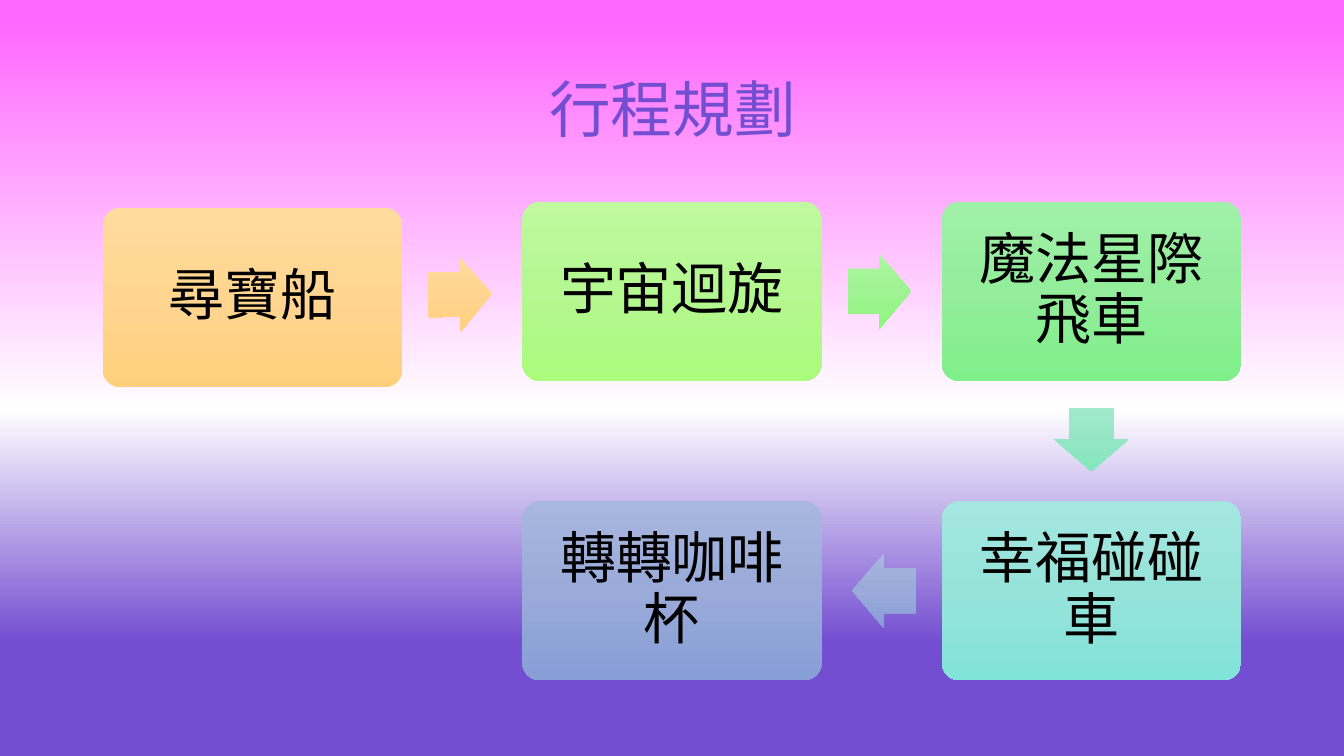
import math

import pptx
import pptx.dml.color
import pptx.enum.shapes
import pptx.enum.text
import pptx.oxml
import pptx.oxml.ns
import pptx.util

KIND = pptx.enum.shapes.MSO_SHAPE
HAN = "Noto Sans CJK JP"
STOPS = (0, 50, 100)
RIDES = [
    ("尋寶船", 0, 0.02, ("FFDB9E", "FFD590", "FFD07C")),
    ("宇宙迴旋", 1, 0, ("C0F99F", "B5F791", "ABFB7D")),
    ("魔法星際飛車", 2, 0, ("A1F0A9", "93ED9B", "7FEF89")),
    ("幸福碰碰車", 2, 1, ("A4E7E0", "96E3DA", "82E3D9")),
    ("轉轉咖啡杯", 1, 1, ("A8B7DF", "9AABD9", "889ED7")),
]
LINKS = [
    ("FFDB9E", "FFD590", "FFD07C"),
    ("ACF6A0", "9FF392", "8EF77D"),
    ("A3EACC", "95E6C4", "81E7BD"),
    ("A8B7DF", "9AABD9", "889ED7"),
]


def tint(code):
    return pptx.dml.color.RGBColor.from_string(code)


def apply(item, style):
    for name, value in style.items():
        setattr(item, name, value)


class Deck:
    """Holds the style and slide, and draws on a grid of ride boxes."""

    left, top, wide, high = 1.02, 2, 4.16, 2.97
    box, arrow, pad = (2.97, 1.78), (0.63, 0.74), 0.22

    def __init__(self):
        self.show = pptx.Presentation()
        apply(self.show, {"slide_width": pptx.util.Inches(13.33),
                          "slide_height": pptx.util.Inches(7.5)})
        self.slide = self.show.slides.add_slide(self.show.slide_layouts[5])
        self.group = self.slide.shapes.add_group_shape()

    def blend(self, fill, root, codes, stops=STOPS):
        fill.gradient()
        fill.gradient_angle = 270
        qn = pptx.oxml.ns.qn
        grad = next(root.iter(qn("a:gradFill")))
        grad.set("rotWithShape", "0")
        marks = grad.find(qn("a:gsLst"))
        for mark in list(marks):
            marks.remove(mark)
        for code, stop in zip(codes, stops):
            marks.append(pptx.oxml.parse_xml(
                f'<a:gs {pptx.oxml.ns.nsdecls("a")} pos="{stop * 1000}">'
                f'<a:srgbClr val="{code}"/></a:gs>'))

    def ground(self, codes, stops):
        self.blend(self.slide.background.fill, self.slide._element, codes, stops)

    def label(self, frame, text, size, face, code):
        apply(frame, {"word_wrap": True,
                      "vertical_anchor": pptx.enum.text.MSO_ANCHOR.MIDDLE})
        para = frame.paragraphs[0]
        apply(para, {"alignment": pptx.enum.text.PP_ALIGN.CENTER,
                     "line_spacing": 0.9})
        run = para.add_run()
        run.text = text
        apply(run.font, {"size": pptx.util.Pt(size), "name": face})
        run.font.color.rgb = tint(code)
        east = pptx.oxml.parse_xml(
            f'<a:ea {pptx.oxml.ns.nsdecls("a")} typeface="{HAN}"/>')
        run.font._element.append(east)

    def title(self, text, code):
        head = self.slide.shapes.title
        share = {"left": 0.069, "top": 0.053, "width": 0.863, "height": 0.193}
        full = {"left": self.show.slide_width, "width": self.show.slide_width,
                "top": self.show.slide_height, "height": self.show.slide_height}
        apply(head, {name: int(part * full[name]) for name, part in share.items()})
        self.label(head.text_frame, text, 44, HAN, code)

    def shape(self, kind, col, row, size, codes, bends):
        mid = (self.left + self.box[0] / 2 + col * self.wide,
               self.top + self.box[1] / 2 + row * self.high)
        spot = [pptx.util.Inches(m - s / 2) for m, s in zip(mid, size)]
        item = self.group.shapes.add_shape(
            kind, *spot, *map(pptx.util.Inches, size))
        for place, bend in enumerate(bends):
            item.adjustments[place] = bend
        item.shadow.inherit = False
        item.line.fill.background()
        self.blend(item.fill, item._element, codes)
        return item

    def ride(self, text, col, row, codes):
        item = self.shape(KIND.ROUNDED_RECTANGLE, col, row, self.box, codes, [0.1])
        sides = ("left", "top", "right", "bottom")
        apply(item.text_frame,
              {f"margin_{side}": pptx.util.Inches(self.pad) for side in sides})
        self.label(item.text_frame, text, 40, "Calibri", "000000")

    def link(self, start, end, codes):
        across, down = end[0] - start[0], end[1] - start[1]
        item = self.shape(KIND.RIGHT_ARROW, start[0] + across * 0.495,
                          start[1] + down * 0.495, self.arrow, codes, [0.6, 0.5])
        turn = math.atan2(down * self.high, across * self.wide)
        item.rotation = round(math.degrees(turn)) % 360


def main():
    deck = Deck()
    deck.ground(("FF66FF", "FFFFFF", "734ED0"), (2, 54, 85))
    deck.title("行程規劃", "734ED0")
    for place, ride in enumerate(RIDES):
        if place:
            deck.link(RIDES[place - 1][1:3], ride[1:3], LINKS[place - 1])
        deck.ride(*ride)
    deck.show.save("out.pptx")


if __name__ == "__main__":
    main()
